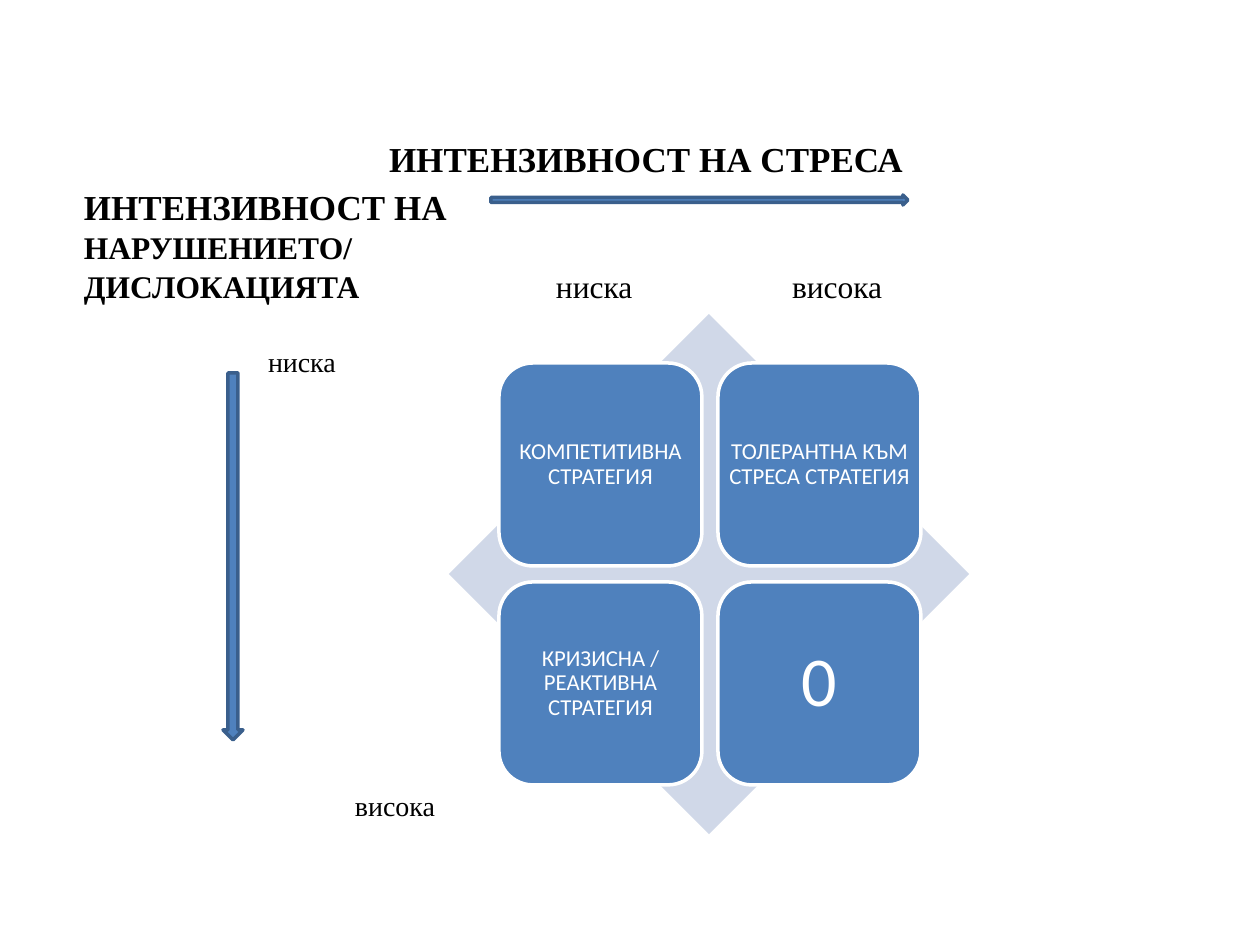
from pptx import Presentation
from pptx.dml.color import RGBColor
from pptx.enum.shapes import MSO_SHAPE
from pptx.enum.text import MSO_ANCHOR, PP_ALIGN
from pptx.util import Emu, Inches, Pt

SERIF, SANS = "Times New Roman", "Calibri"
BLUE, WHITE = "4F81BD", "FFFFFF"


def px(*lengths):
    return [Emu(round(length * 914400 / 126)) for length in lengths]


def write(box, lines, inset=0, align=PP_ALIGN.LEFT, spacing=1.0, **font):
    """Fill a shape with lines of (text, size in points)."""
    frame = box.text_frame
    margin = px(inset)[0]
    frame_format = {"word_wrap": True, "vertical_anchor": MSO_ANCHOR.MIDDLE,
                    "margin_left": margin, "margin_right": margin,
                    "margin_top": margin, "margin_bottom": margin}
    for name, value in frame_format.items():
        setattr(frame, name, value)
    for number, (text, size) in enumerate(lines):
        para = frame.add_paragraph() if number else frame.paragraphs[0]
        para.alignment, para.line_spacing = align, spacing
        span = para.add_run()
        span.text = text
        font_format = {"name": SERIF, "bold": False, "size": Pt(size)} | font
        color = font_format.pop("color", "000000")
        for name, value in font_format.items():
            setattr(span.font, name, value)
        span.font.color.rgb = RGBColor.from_string(color)


deck = Presentation()
deck.slide_width, deck.slide_height = Inches(10), Inches(7.5)
page = deck.slides.add_slide(deck.slide_layouts[5])

# Title: the horizontal axis
title = page.shapes.title
title.left, title.top, title.width, title.height = px(389, 134, 560, 50)
write(title, [("ИНТЕНЗИВНОСТ НА СТРЕСА", 20)], bold=True)

# Heading of the vertical axis
heading = page.shapes.add_textbox(*px(84, 189, 390, 116))
write(heading, [("ИНТЕНЗИВНОСТ НА", 20), ("НАРУШЕНИЕТО/", 18), ("ДИСЛОКАЦИЯТА", 18)],
      spacing=Pt(22), bold=True)

# Low and high ends of both axes
for text, size, left, middle in [("ниска", 18, 556, 286), ("висока", 18, 792, 286),
                                 ("ниска", 16, 268, 361), ("висока", 16, 355, 805)]:
    label = page.shapes.add_textbox(*px(left, middle - 20, 130, 40))
    write(label, [(text, size)])

# Matrix of strategies on a diamond, then the axis arrows
tile, pitch = 203, 219
shapes = [(MSO_SHAPE.DIAMOND, (449, 314, 520, 520), "D0D8E8", None, None)]
strategies = [("КОМПЕТИТИВНА СТРАТЕГИЯ", 13), ("ТОЛЕРАНТНА КЪМ СТРЕСА СТРАТЕГИЯ", 13),
              ("КРИЗИСНА / РЕАКТИВНА СТРАТЕГИЯ", 13), ("0", 40)]
for number, strategy in enumerate(strategies):
    row, column = divmod(number, 2)
    place = (499 + column * pitch, 363 + row * pitch, tile, tile)
    shapes.append((MSO_SHAPE.ROUNDED_RECTANGLE, place, BLUE, WHITE, strategy))
shapes += [(MSO_SHAPE.DOWN_ARROW, (223, 373, 20, 367), BLUE, "3A5F8C", None),
           (MSO_SHAPE.RIGHT_ARROW, (491, 195, 417, 10), BLUE, "3A5F8C", None)]

for kind, place, fill, line, strategy in shapes:
    shape = page.shapes.add_shape(kind, *px(*place))
    shape.shadow.inherit = False
    shape.fill.solid()
    shape.fill.fore_color.rgb = RGBColor.from_string(fill)
    if line:
        shape.line.color.rgb = RGBColor.from_string(line)
        shape.line.width = Pt(2)
    else:
        shape.line.fill.background()
    if strategy:
        # The negative inset offsets the room kept for the round corners
        write(shape, [strategy], inset=-4, align=PP_ALIGN.CENTER, spacing=0.9,
              name=SANS, color=WHITE)

deck.save("out.pptx")
